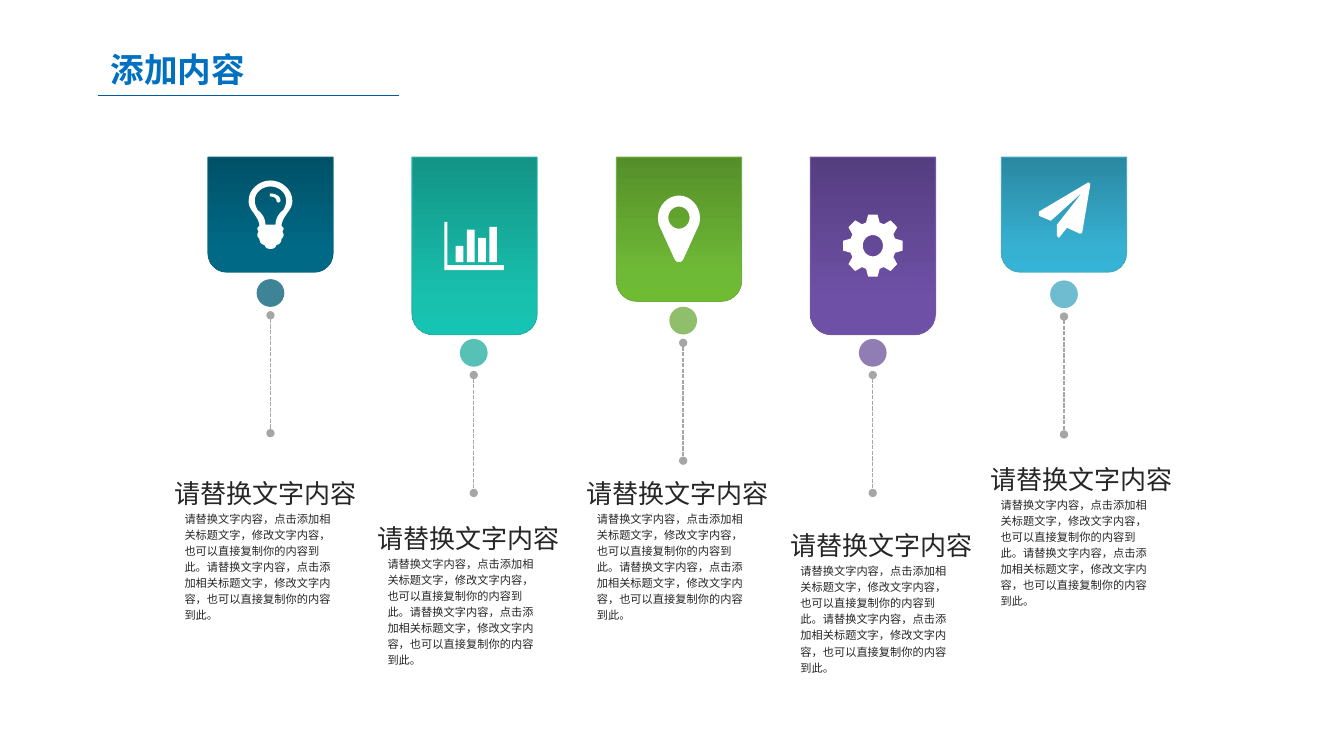
from copy import deepcopy
from math import cos, pi, radians, sin

from pptx import Presentation
from pptx import util as u
from pptx.dml.color import RGBColor
from pptx.enum import dml, shapes, text
from pptx.oxml import ns, xmlchemy

WHITE = RGBColor(0xFF, 0xFF, 0xFF)
INK = RGBColor(0x26, 0x26, 0x26)
GREY = RGBColor(0xA6, 0xA6, 0xA6)
TITLE_BLUE = RGBColor(0x00, 0x70, 0xC0)
RULE_BLUE = RGBColor(0x00, 0x5D, 0xA2)
# Each palette: gradient start, 80 % and end, outline, dot
PETROL, TEAL, GREEN, PURPLE, SKY = (
    [RGBColor.from_string(code) for code in codes.split()] for codes in (
        "005167 006986 006986 0B637C 0E647C",
        "139486 18C0AE 15C4B2 29B1A3 2DB2A4",
        "558E29 6EB936 6FBC33 71AE43 74AF47",
        "553E80 6E50A6 6E4FA8 72599F 755DA1",
        "2A88A2 37B1D2 34B4D6 46AAC5 4BACC6"))

HEADING = "请替换文字内容"
SENTENCE = "请替换文字内容，点击添加相关标题文字，修改文字内容，也可以直接复制你的内容到此。"
CARD_TOP, CARD_WIDTH, DOT_SIZE = 112.3, 89.4, 19.8


def curve(start, *cubics, steps=8):
    """Points along a chain of cubic curves; each is (x1, y1, x2, y2, x, y)."""
    points = [start]
    for x1, y1, x2, y2, x3, y3 in cubics:
        x0, y0 = points[-1]
        for step in range(1, steps + 1):
            t = step / steps
            a, b, c, d = (1 - t) ** 3, 3 * t * (1 - t) ** 2, 3 * t * t * (1 - t), t ** 3
            points.append((a * x0 + b * x1 + c * x2 + d * x3,
                           a * y0 + b * y1 + c * y2 + d * y3))
    return points


def mirrored(right_half):
    return right_half + [(-x, y) for x, y in reversed(right_half)]


def ring(cy, rx, ry, count=40):
    return [(rx * cos(2 * pi * i / count), cy + ry * sin(2 * pi * i / count))
            for i in range(count)]


def box(left, top, right, bottom):
    return [(left, top), (right, top), (right, bottom), (left, bottom)]


def gear_outline(cy, teeth=8):
    corners = ((-17, 17.3), (-9, 22.4), (9, 22.4), (17, 17.3))
    return [(0.96 * r * sin(radians(360 / teeth * tooth + turn)),
             cy - r * cos(radians(360 / teeth * tooth + turn)))
            for tooth in range(teeth) for turn, r in corners]


# Icon outlines, measured from the middle of the card's top edge
BULB = [
    mirrored(curve((0, 16.6), (7.9, 16.6, 15.6, 23, 15.6, 31),
                   (15.6, 34.6, 14.4, 36.7, 12.2, 39.6), (10.8, 41.8, 7.9, 45.4, 7.9, 49),
                   (8.6, 49.7, 9.4, 50.4, 9.4, 51.1), (9.4, 51.8, 8.6, 52.6, 8.6, 53.3),
                   (8.6, 53.3, 9.4, 54.7, 9.4, 55.4), (9.4, 56.9, 8.6, 57.6, 7.9, 58.3),
                   (7.9, 61.2, 5.8, 62.6, 4.3, 62.6), (3.6, 64.8, 2.2, 65.5, 0, 65.5))),
    mirrored(curve((0, 20.9), (5, 20.9, 11.2, 24.5, 11.2, 31),
                   (11.2, 33.1, 10.4, 35.3, 9.7, 36.7), (9, 38.2, 8.6, 38.2, 7.6, 39),
                   (5, 41.8, 3.6, 44.6, 3.6, 48.2))),
    curve((5.8, 32.4), (5, 32.4, 4.3, 31.7, 4.3, 31), (4.3, 28.8, 1.4, 28.1, 0, 28.1),
          (-0.7, 28.1, -0.7, 25.9, 0, 25.9), (2.9, 25.9, 7.2, 27.4, 7.2, 31),
          (7.2, 31.7, 5.8, 32.4, 5.8, 32.4))]
BARS = [[(-21.6, 46.1), (-19.4, 46.1), (-19.4, 77), (21, 77), (21, 80.6), (-21.6, 80.6)]]
BARS += [box(-13.5 + 8 * i, top, -8 + 8 * i, 74.9)
         for i, top in enumerate((63.4, 51.8, 57.6, 49.7))]
PIN = [
    mirrored(curve((0, 27.4), (7.9, 27.4, 15, 34.6, 15, 43.2),
                   (15, 44.6, 14.8, 47.5, 14, 49), (14, 49, 3.2, 72.7, 3.2, 72.7),
                   (2.5, 74.2, 1.4, 74.9, 0, 74.9))),
    ring(43.2, 7.6, 7.9)]
GEAR = [gear_outline(63.2), ring(63.2, 7.2, 7.6)]
PLANE = [[(18.7, 20.2), (13, 54), (11.5, 54.7), (2.2, 50.4), (-3.6, 57.6), (-5, 56.2),
          (-5, 48.2), (13, 25.2), (-9.4, 45.4), (-18, 41.8), (-18, 38.9), (17.3, 18),
          (18.7, 18.7)]]

# palette, icon, card middle, card height, dot middle, dot top, text left, text top
COLUMNS = (
    (PETROL, BULB, 193.2, 82.1, 193.2, 199.4, 124.6, 335.3),
    (TEAL, BARS, 339, 126.7, 338.4, 242.1, 269.6, 367.7),
    (GREEN, PIN, 485, 103, 488, 219.1, 419.1, 335.3),
    (PURPLE, GEAR, 623.5, 126.7, 623.4, 242.1, 564.5, 372.8),
    (SKY, PLANE, 760, 82.1, 760, 200.3, 707.6, 325.4))


class Deck:
    font = "Calibri"

    def __init__(self, width, height):
        self.file = Presentation()
        self.file.slide_width, self.file.slide_height = u.Pt(width), u.Pt(height)
        self.slide = self.file.slides.add_slide(self.file.slide_layouts[6])

    def shape(self, kind, left, top, width, height):
        item = self.slide.shapes.add_shape(
            kind, u.Pt(left), u.Pt(top), u.Pt(width), u.Pt(height))
        item.shadow.inherit = False
        return item

    def card(self, middle, height, palette):
        card = self.shape(shapes.MSO_SHAPE.ROUND_2_SAME_RECTANGLE,
                          middle - CARD_WIDTH / 2, CARD_TOP, CARD_WIDTH, height)
        card.rotation = 180
        card.fill.gradient()
        card.fill.gradient_angle = 90
        stop_list = card._element.spPr.find(".//" + ns.qn("a:gsLst"))
        stop_list.append(deepcopy(stop_list[-1]))
        for stop, position, color in zip(card.fill.gradient_stops, (0, 0.8, 1), palette):
            stop.position = position
            stop.color.rgb = color
        card.line.color.rgb = palette[3]
        card.line.width = u.Pt(0.75)

    def icon(self, outlines, middle):
        builder = None
        for outline in outlines:
            points = [(u.Pt(middle + x), u.Pt(CARD_TOP + y)) for x, y in outline]
            if builder is None:
                builder = self.slide.shapes.build_freeform(*points[0], scale=1.0)
            else:
                builder.move_to(*points[0])
            builder.add_line_segments(points[1:], close=True)
        icon = builder.convert_to_shape()
        icon.shadow.inherit = False
        icon.fill.solid()
        icon.fill.fore_color.rgb = WHITE
        icon.line.fill.background()

    def dot(self, middle, top, color):
        dot = self.shape(shapes.MSO_SHAPE.OVAL, middle - DOT_SIZE / 2, top, DOT_SIZE, DOT_SIZE)
        dot.fill.solid()
        dot.fill.fore_color.rgb = color
        dot.line.fill.background()
        tint = dot._element.spPr.find(".//" + ns.qn("a:srgbClr"))
        tint.append(xmlchemy.OxmlElement("a:alpha"))
        tint[-1].set("val", "80000")

    def line(self, x1, y1, x2, y2, color, dotted=False):
        line = self.slide.shapes.add_connector(
            shapes.MSO_CONNECTOR.STRAIGHT, u.Pt(x1), u.Pt(y1), u.Pt(x2), u.Pt(y2))
        line.line.color.rgb = color
        line.line.width = u.Pt(1)
        if dotted:
            line.line.dash_style = dml.MSO_LINE.SQUARE_DOT
            for end in ("a:headEnd", "a:tailEnd"):
                cap = xmlchemy.OxmlElement(end)
                cap.set("type", "oval")
                line.line._ln.append(cap)
        line._element.spPr.append(xmlchemy.OxmlElement("a:effectLst"))

    def text(self, words, left, top, width, height, size, color=INK):
        holder = self.slide.shapes.add_textbox(
            u.Pt(left), u.Pt(top), u.Pt(width), u.Pt(height))
        frame = holder.text_frame
        frame.word_wrap = True
        frame.vertical_anchor = text.MSO_ANCHOR.MIDDLE
        frame.margin_left = frame.margin_right = frame.margin_top = frame.margin_bottom = 0
        paragraph = frame.paragraphs[0]
        paragraph.text = words
        paragraph.line_spacing = 1.2
        paragraph._p.get_or_add_pPr().set("hangingPunct", "0")
        paragraph.font.name = self.font
        paragraph.font.size = u.Pt(size)
        paragraph.font.color.rgb = color
        return paragraph


def main():
    deck = Deck(960, 540)
    deck.line(69.8, 68.4, 285.1, 68.4, RULE_BLUE)
    title = deck.text("添加内容", 71.3, 31.7, 111.6, 36, 24, TITLE_BLUE)
    title.alignment = text.PP_ALIGN.CENTER
    title.line_spacing = 1
    title.font.bold = True
    title.font.name = "Noto Sans CJK SC"

    for palette, icon, middle, height, stem, dot_top, left, top in COLUMNS:
        deck.card(middle, height, palette)
        deck.icon(icon, middle)
        deck.dot(stem, dot_top, palette[4])
        deck.line(stem, dot_top + 25.8, stem, dot_top + 110, GREY, dotted=True)
        deck.text(HEADING, left, top, 137.5, 28.8, 18.6)
        deck.text(SENTENCE * 2, left + 7.2, top + 30.2, 111.6, 77, 8)
    deck.file.save("out.pptx")


if __name__ == "__main__":
    main()
